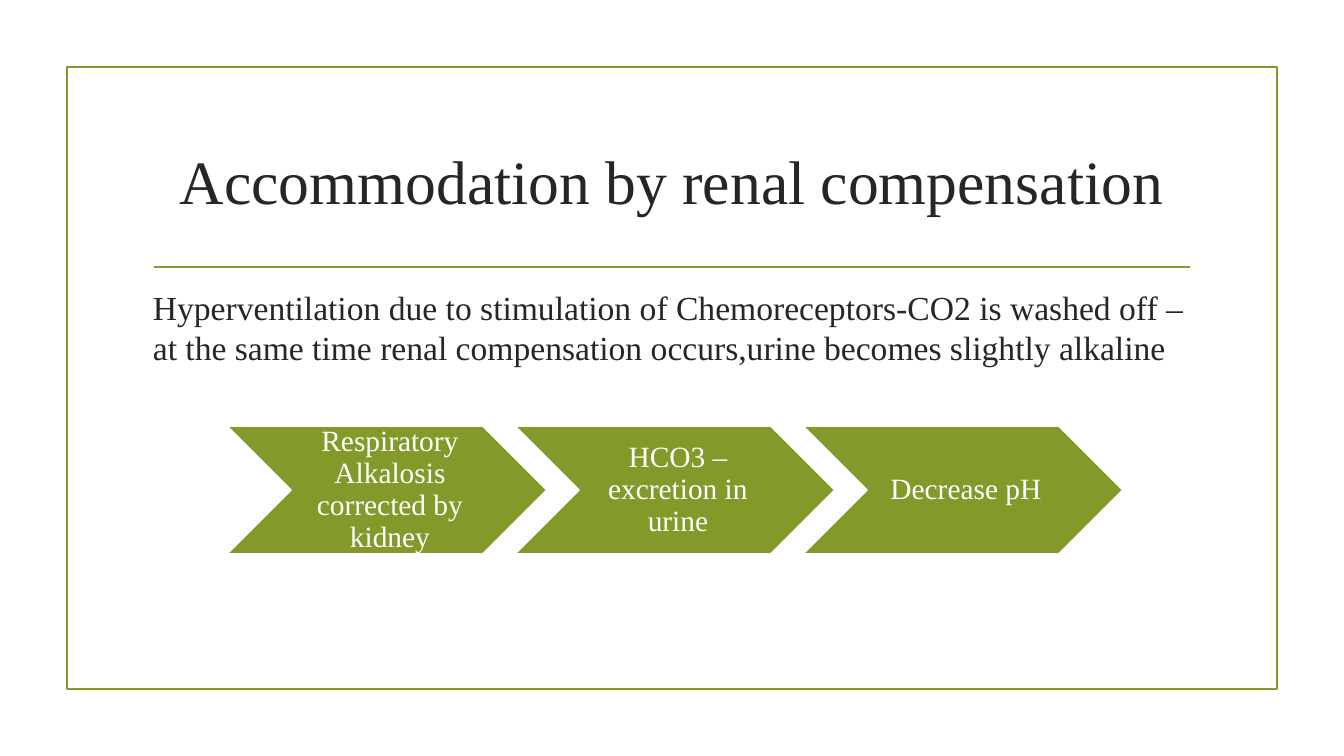
from lxml import etree
from pptx import Presentation
from pptx.dml.color import RGBColor
from pptx.enum.shapes import MSO_CONNECTOR, MSO_SHAPE
from pptx.enum.text import MSO_ANCHOR, PP_ALIGN
from pptx.oxml.ns import qn
from pptx.util import Pt

TITLE = "Accommodation by renal compensation"
BODY = (
    "Hyperventilation due to stimulation of Chemoreceptors-CO2 is washed off –"
    "at the same time renal compensation occurs,urine becomes slightly alkaline"
)
STEPS = [
    "Respiratory Alkalosis corrected by kidney",
    "HCO3 – excretion in urine",
    "Decrease pH",
]

FONT = "Times New Roman"
GREEN = RGBColor(0x83, 0x99, 0x2A)
DARK = RGBColor(0x26, 0x26, 0x26)
WHITE = RGBColor(0xFF, 0xFF, 0xFF)
LINE_WIDTH = Pt(1.25)

RECTANGLE = MSO_SHAPE.RECTANGLE
CHEVRON = MSO_SHAPE.CHEVRON
STRAIGHT = MSO_CONNECTOR.STRAIGHT
TOP, MIDDLE = MSO_ANCHOR.TOP, MSO_ANCHOR.MIDDLE
LEFT, CENTER = PP_ALIGN.LEFT, PP_ALIGN.CENTER

# Lengths in px
SLIDE_SIZE = (1344, 756)
FRAME = (67, 67, 1210, 622)
RULE = (154, 267, 1190, 267)
TITLE_BOX = (143, 108, 1058, 144)
BODY_BOX = (143, 282, 1058, 366)
STEP_LEFT, STEP_TOP, STEP_WIDTH, STEP_HEIGHT = 227, 426, 320, 128
STEP_PITCH = 288
STEP_INSETS = (9, 3, 3, 3)


def emu(*lengths):
    return [round(length * 914400 / 100.8) for length in lengths]


def write(shape, text, size, color, alignment, anchor):
    frame = shape.text_frame
    frame.word_wrap = True
    frame.vertical_anchor = anchor
    paragraph = frame.paragraphs[0]
    paragraph.alignment = alignment
    run = paragraph.add_run()
    run.text = text
    run.font.name = FONT
    run.font.size = Pt(size)
    run.font.color.rgb = color
    return frame


def add_shape(slide, kind, box, line_color):
    shape = slide.shapes.add_shape(kind, *emu(*box))
    shape.shadow.inherit = False
    shape.line.color.rgb = line_color
    shape.line.width = LINE_WIDTH
    return shape


def add_frame_and_rule(slide):
    add_shape(slide, RECTANGLE, FRAME, GREEN).fill.background()
    rule = slide.shapes.add_connector(STRAIGHT, *emu(*RULE))
    rule.line.color.rgb = GREEN
    rule.line.width = LINE_WIDTH
    etree.SubElement(rule._element.spPr, qn("a:effectLst"))


def add_step(slide, index, text):
    box = (STEP_LEFT + index * STEP_PITCH, STEP_TOP, STEP_WIDTH, STEP_HEIGHT)
    chevron = add_shape(slide, CHEVRON, box, WHITE)
    chevron.fill.solid()
    chevron.fill.fore_color.rgb = GREEN
    frame = write(chevron, text, 21, WHITE, CENTER, MIDDLE)
    (frame.margin_left, frame.margin_top,
     frame.margin_right, frame.margin_bottom) = emu(*STEP_INSETS)
    frame.paragraphs[0].line_spacing = 0.9


def main():
    presentation = Presentation()
    presentation.slide_width, presentation.slide_height = emu(*SLIDE_SIZE)
    slide = presentation.slides.add_slide(presentation.slide_layouts[6])

    add_frame_and_rule(slide)
    title = slide.shapes.add_textbox(*emu(*TITLE_BOX))
    write(title, TITLE, 44, DARK, CENTER, MIDDLE)
    body = slide.shapes.add_textbox(*emu(*BODY_BOX))
    write(body, BODY, 24, DARK, LEFT, TOP)
    for index, text in enumerate(STEPS):
        add_step(slide, index, text)

    presentation.save("out.pptx")


if __name__ == "__main__":
    main()
